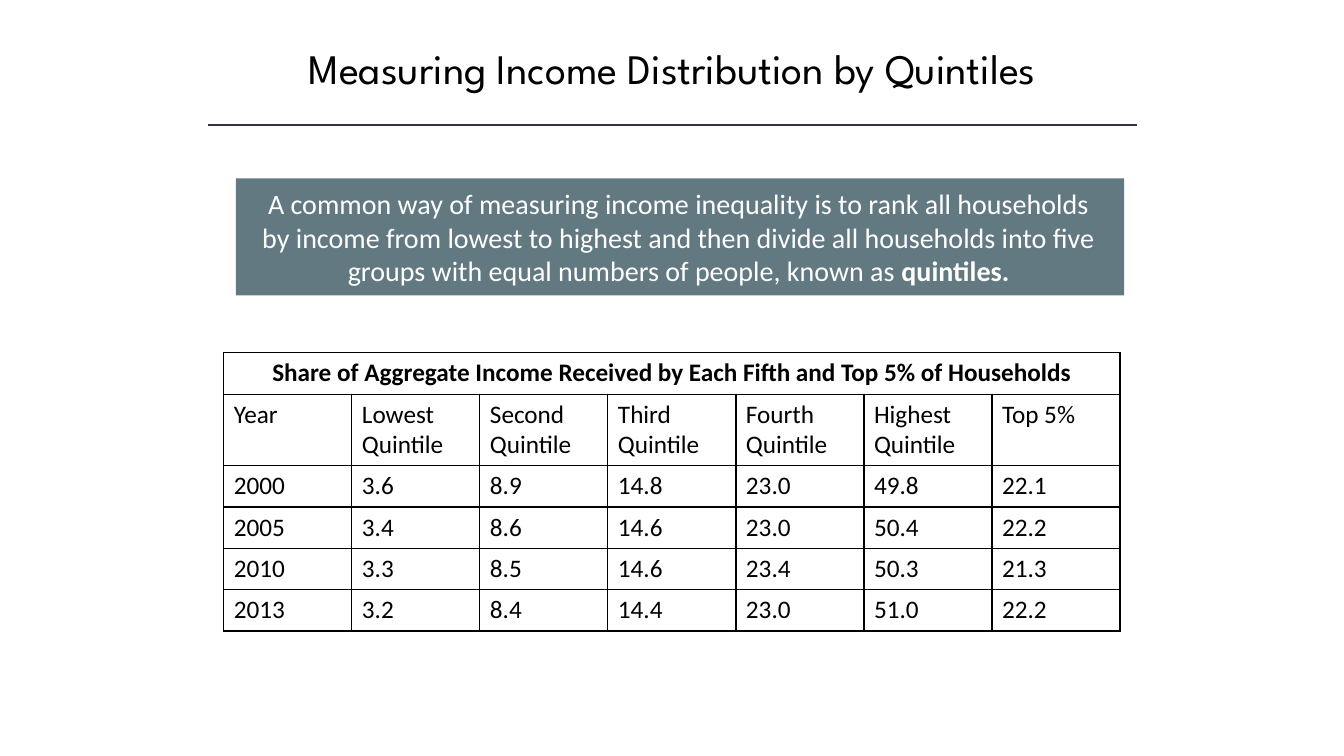
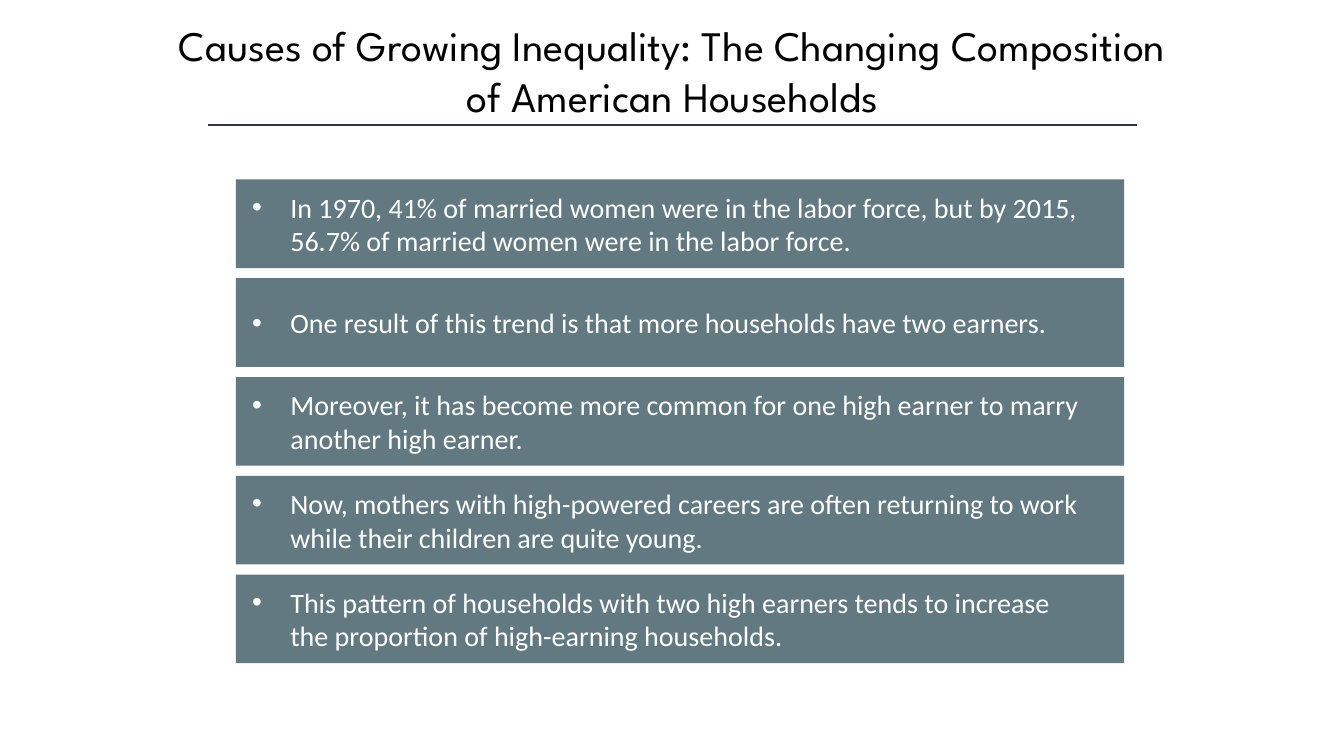
import lxml.etree
import pptx
import pptx.dml.color
import pptx.enum.shapes
import pptx.enum.text
import pptx.oxml.ns
import pptx.util

PX = 9144
SLATE, RULE, BLACK, WHITE = "627981", "323542", "000000", "FFFFFF"
PP_ALIGN = pptx.enum.text.PP_ALIGN
MIDDLE = pptx.enum.text.MSO_ANCHOR.MIDDLE
qn = pptx.oxml.ns.qn


def rgb(value):
    return pptx.dml.color.RGBColor.from_string(value)


def add_run(p, text, color, **formats):
    r = p.add_run()
    r.text = text
    r.font.color.rgb = rgb(color)
    for name, value in formats.items():
        setattr(r.font, name, value)


TITLE = {"name": "League Spartan", "size": pptx.util.Pt(30)}
BAND = {"name": "Calibri", "size": pptx.util.Pt(20)}
CELL = {"name": "Calibri", "size": pptx.util.Pt(18)}

slides = [
    {
        "title": "Measuring Income Distribution by Quintiles",
        "title_box": (167, 37, 1000, 61),
        "top": 177, "height": 116, "insets": (22, 25),
        "align": PP_ALIGN.CENTER, "bullet": False,
        "bands": [[
            ("A common way of measuring income inequality is to rank all households by income "
             "from lowest to highest and then divide all households into five groups with equal "
             "numbers of people, known as ", False),
            ("quintiles.", True),
        ]],
    },
    {
        "title": "Causes of Growing Inequality: The Changing Composition of American Households",
        "title_box": (167, 14, 1000, 111),
        "top": 178, "height": 88, "insets": (16, 31),
        "align": PP_ALIGN.LEFT, "bullet": True,
        "bands": [[(text, False)] for text in (
            "In 1970, 41% of married women were in the labor force, but by 2015, "
            "56.7% of married women were in the labor force.",
            "One result of this trend is that more households have two earners.",
            "Moreover, it has become more common for one high earner to marry another high earner.",
            "Now, mothers with high-powered careers are often returning to work "
            "while their children are quite young.",
            "This pattern of households with two high earners tends to increase "
            "the proportion of high-earning households.",
        )],
    },
]

prs = pptx.Presentation()
prs.slide_width = 1333 * PX
prs.slide_height = 750 * PX

for item in slides:
    s = prs.slides.add_slide(prs.slide_layouts[5])

    title = s.shapes.title
    title.left, title.top, title.width, title.height = [n * PX for n in item["title_box"]]
    tf = title.text_frame
    tf.word_wrap = True
    tf.auto_size = pptx.enum.text.MSO_AUTO_SIZE.NONE
    tf.vertical_anchor = MIDDLE
    p = tf.paragraphs[0]
    p.alignment = PP_ALIGN.CENTER
    add_run(p, item["title"], BLACK, **TITLE)

    rule = s.shapes.add_connector(
        pptx.enum.shapes.MSO_CONNECTOR.STRAIGHT, 206 * PX, 124 * PX, 1128 * PX, 124 * PX)
    rule.line.color.rgb = rgb(RULE)
    rule.line.width = pptx.util.Pt(1)
    lxml.etree.SubElement(rule._element.spPr, qn("a:effectLst"))

    for i, runs in enumerate(item["bands"]):
        top = item["top"] + i * (item["height"] + 10)
        sp = s.shapes.add_shape(
            pptx.enum.shapes.MSO_SHAPE.RECTANGLE,
            234 * PX, top * PX, 881 * PX, item["height"] * PX)
        sp.shadow.inherit = False
        sp.fill.solid()
        sp.fill.fore_color.rgb = rgb(SLATE)
        sp.line.fill.background()
        tf = sp.text_frame
        tf.word_wrap = True
        tf.vertical_anchor = MIDDLE
        tf.margin_left, tf.margin_right = [n * PX for n in item["insets"]]
        p = tf.paragraphs[0]
        p.alignment = item["align"]
        if item["bullet"]:
            pPr = p._p.get_or_add_pPr()
            pPr.set("marL", str(38 * PX))
            pPr.set("indent", str(-38 * PX))
            lxml.etree.SubElement(pPr, qn("a:buFont")).set("typeface", "Arial")
            lxml.etree.SubElement(pPr, qn("a:buChar")).set("char", "•")
        for text, bold in runs:
            add_run(p, text, WHITE, bold=bold, **BAND)

rows = [
    ["Share of Aggregate Income Received by Each Fifth and Top 5% of Households"],
    ["Year", "Lowest Quintile", "Second Quintile", "Third Quintile",
     "Fourth Quintile", "Highest Quintile", "Top 5%"],
    ["2000", "3.6", "8.9", "14.8", "23.0", "49.8", "22.1"],
    ["2005", "3.4", "8.6", "14.6", "23.0", "50.4", "22.2"],
    ["2010", "3.3", "8.5", "14.6", "23.4", "50.3", "21.3"],
    ["2013", "3.2", "8.4", "14.4", "23.0", "51.0", "22.2"],
]
row_heights = [41, 69, 41, 41, 41, 41]

table = prs.slides[0].shapes.add_table(
    len(rows), 7, 222 * PX, 350 * PX, 889 * PX, sum(row_heights) * PX).table
table.first_row = False
table.horz_banding = False
for column in table.columns:
    column.width = 127 * PX
for row, height in zip(table.rows, row_heights):
    row.height = height * PX
table.cell(0, 0).merge(table.cell(0, 6))

for cell in table.iter_cells():
    tcPr = cell._tc.get_or_add_tcPr()
    for side in ("a:lnL", "a:lnR", "a:lnT", "a:lnB"):
        ln = lxml.etree.SubElement(tcPr, qn(side))
        ln.set("w", str(pptx.util.Pt(1)))
        fill = lxml.etree.SubElement(ln, qn("a:solidFill"))
        lxml.etree.SubElement(fill, qn("a:srgbClr")).set("val", BLACK)
    cell.fill.background()

for i, values in enumerate(rows):
    for j, value in enumerate(values):
        p = table.cell(i, j).text_frame.paragraphs[0]
        p.alignment = PP_ALIGN.CENTER if i == 0 else PP_ALIGN.LEFT
        add_run(p, value, BLACK, bold=i == 0, **CELL)

prs.save("out.pptx")
